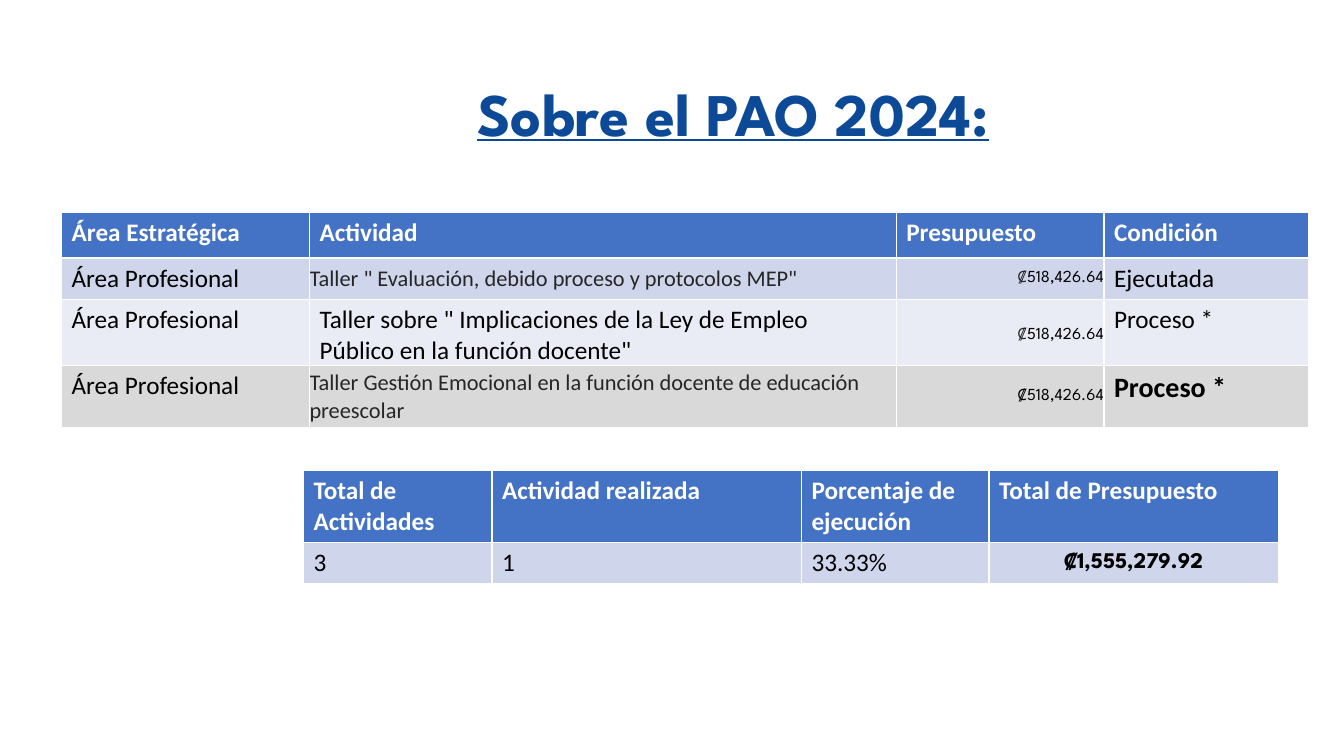
"""Build the PAO 2024 slide with its activity and budget tables."""
from dataclasses import dataclass, replace

from pptx import Presentation
from pptx import util as u
from pptx.dml.color import RGBColor
from pptx.enum import text as t

NAVY = RGBColor(0x0C, 0x4A, 0x97)
BLUE = RGBColor(0x44, 0x72, 0xC4)
PALE = RGBColor(0xCF, 0xD5, 0xEA)
MIST = RGBColor(0xE9, 0xEB, 0xF5)
GREY = RGBColor(0xD9, 0xD9, 0xD9)
DARK = RGBColor(0x26, 0x26, 0x26)
BLACK = RGBColor(0, 0, 0)
WHITE = RGBColor(255, 255, 255)
SANS, SPARTAN = "Calibri", "League Spartan"
LEFT, MID, RIGHT = t.PP_ALIGN.LEFT, t.PP_ALIGN.CENTER, t.PP_ALIGN.RIGHT


@dataclass(frozen=True)
class Cell:
    text: str
    size: float = 18
    font: str = SANS
    color: RGBColor = BLACK
    bold: bool = False
    align: t.PP_ALIGN = LEFT
    tight: bool = False
    sign: str = ""


@dataclass(frozen=True)
class Row:
    high: float
    fill: RGBColor
    cells: list[Cell]


@dataclass(frozen=True)
class Grid:
    left: float
    top: float
    wide: list[float]
    rows: list[Row]


def write(para, text: str, *, size: float, font: str, color: RGBColor,
          bold: bool = False, under: bool | None = None,
          align: t.PP_ALIGN = LEFT) -> None:
    para.alignment = align
    run = para.add_run()
    run.text = text
    face = run.font
    face.size, face.name = u.Pt(size), font
    face.bold, face.underline = bold, under
    face.color.rgb = color


def fill_cell(box, cell: Cell, fill: RGBColor) -> None:
    box.fill.solid()
    box.fill.fore_color.rgb = fill
    if cell.tight:
        box.vertical_anchor = t.MSO_ANCHOR.MIDDLE
        box.margin_left = box.margin_right = 0
        box.margin_top = box.margin_bottom = 0
    para = box.text_frame.paragraphs[0]
    look = dict(size=cell.size, font=cell.font, bold=cell.bold, align=cell.align)
    if cell.sign:
        write(para, cell.sign, color=DARK, **look)
    write(para, cell.text, color=cell.color, **look)


def draw(slide, grid: Grid) -> None:
    high = sum(row.high for row in grid.rows)
    frame = slide.shapes.add_table(
        len(grid.rows), len(grid.wide), u.Inches(grid.left), u.Inches(grid.top),
        u.Inches(sum(grid.wide)), u.Inches(high))
    table = frame.table
    for col, wide in zip(table.columns, grid.wide):
        col.width = u.Inches(wide)
    for r, row in enumerate(grid.rows):
        table.rows[r].height = u.Inches(row.high)
        for c, cell in enumerate(row.cells):
            fill_cell(table.cell(r, c), cell, row.fill)


def head(high: float, *names: str) -> Row:
    return Row(high, BLUE, [Cell(name, color=WHITE, bold=True) for name in names])


AREA = Cell("Área Profesional")
COST = Cell("518,426.64", 12, SPARTAN, align=RIGHT, tight=True, sign="₡")
NOTE = Cell("", 16, color=DARK, tight=True)
WIDE = [2.46, 5.82, 2.06, 2.03]

GRIDS = [
    Grid(0.61, 2.11, WIDE, [
        head(0.45, "Área Estratégica", "Actividad", "Presupuesto", "Condición"),
        Row(0.41, PALE, [
            AREA,
            replace(NOTE, text='Taller " Evaluación, debido proceso y protocolos MEP"'),
            COST, Cell("Ejecutada")]),
        Row(0.66, MIST, [
            AREA,
            Cell('Taller sobre " Implicaciones de la Ley de Empleo Público '
                 'en la función docente"'),
            COST, Cell("Proceso *")]),
    ]),
    Grid(0.61, 3.63, WIDE, [
        Row(0.61, GREY, [
            AREA,
            replace(NOTE, text="Taller Gestión Emocional en la función docente "
                               "de educación preescolar"),
            replace(COST, text="₡518,426.64", sign=""),
            Cell("Proceso *", 20, bold=True)]),
    ]),
    Grid(3.01, 4.67, [1.87, 3.07, 1.86, 2.87], [
        head(0.7, "Total de Actividades", "Actividad realizada",
             "Porcentaje de ejecución", "Total de Presupuesto"),
        Row(0.41, PALE, [
            Cell("3"), Cell("1"), Cell("33.33%"),
            Cell("₡1,555,279.92", 16, SPARTAN, bold=True, align=MID, tight=True)]),
    ]),
]


def add_title(slide) -> None:
    title = slide.shapes.title
    title.left, title.top = u.Inches(2.27), u.Inches(0.81)
    title.width, title.height = u.Inches(10), u.Inches(1.43)
    frame = title.text_frame
    frame.word_wrap = True
    frame.auto_size = t.MSO_AUTO_SIZE.NONE
    frame.vertical_anchor = t.MSO_ANCHOR.BOTTOM
    frame.margin_bottom = u.Inches(0.76)
    para = frame.paragraphs[0]
    para.line_spacing = 0.9
    write(para, "Sobre el PAO 2024:", size=43.2, font=SPARTAN, color=NAVY,
          bold=True, under=True, align=MID)


def main() -> None:
    deck = Presentation()
    deck.slide_width, deck.slide_height = u.Inches(13.33), u.Inches(7.5)
    slide = deck.slides.add_slide(deck.slide_layouts[0])
    sub = slide.placeholders[1].element
    sub.getparent().remove(sub)
    add_title(slide)
    for grid in GRIDS:
        draw(slide, grid)
    deck.save("out.pptx")


if __name__ == "__main__":
    main()
